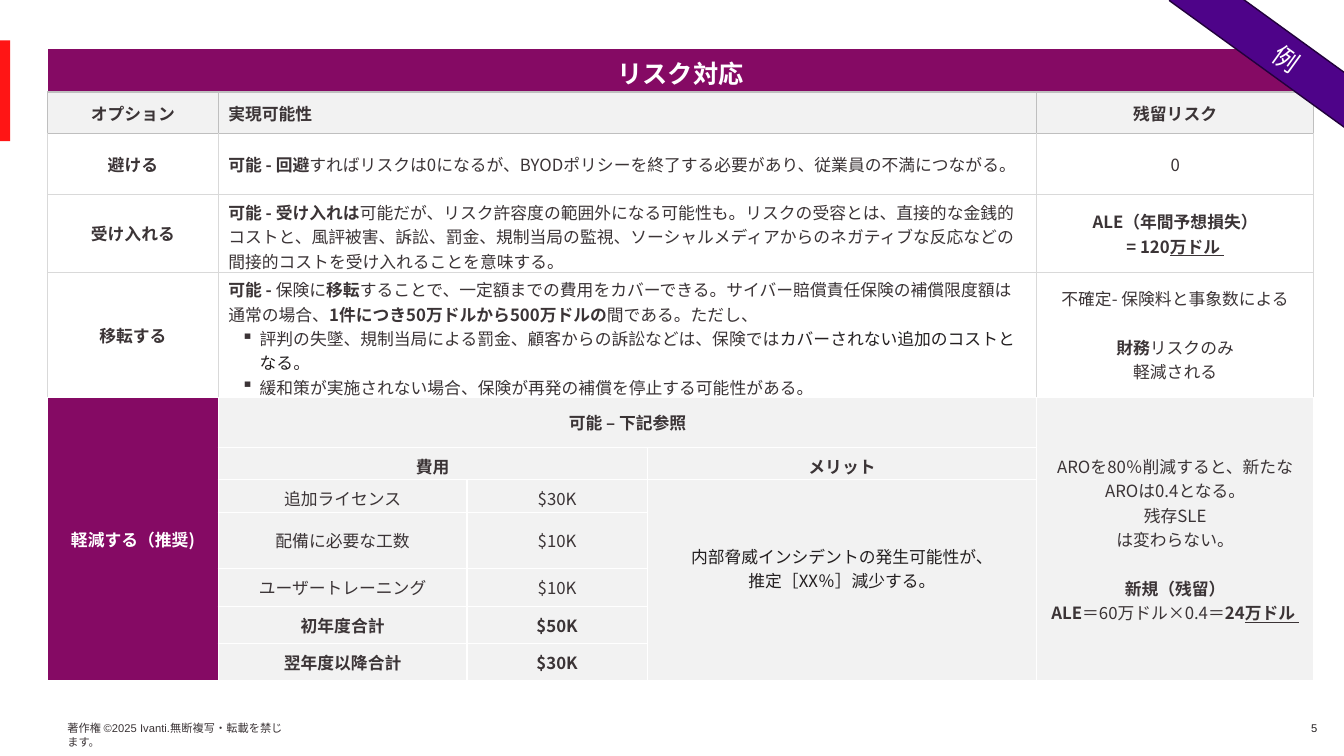
from lxml import etree
from pptx import Presentation
from pptx.dml.color import RGBColor
from pptx.enum import shapes, text
from pptx.oxml import ns
from pptx.util import Cm, Pt

SANS, INK, BLACK, WHITE = "Noto Sans CJK JP", "3B3436", "231F20", "FFFFFF"
PLUM, PALE, GREY, LIGHT = "850A64", "F2F2F2", "BFBFBF", "D9D9D9"
LEFT, MID, RIGHT = text.PP_ALIGN.LEFT, text.PP_ALIGN.CENTER, text.PP_ALIGN.RIGHT
LINE = Pt(17.4)


def rgb(code):
    return RGBColor.from_string(code)


def write(frame, words, size=12, color=INK, face=SANS, align=MID):
    """Marks: * bold, _ underline, ~ black; a line may open with ^ (gap) or ▪ (bullet)."""
    for i, line in enumerate(words.split("\n")):
        para = frame.paragraphs[0] if i == 0 else frame.add_paragraph()
        para.alignment = align
        if line[0] == "^":
            para.space_before = LINE
        if line[0] == "▪":
            props = para._p.get_or_add_pPr()
            props.set("marL", str(Cm(0.79)))
            props.set("indent", str(Cm(-0.46)))
            etree.SubElement(props, ns.qn("a:buChar"), char="▪")
        font = para.font
        font.size, font.name, font.color.rgb = Pt(size), face, rgb(color)
        base = para._p.pPr.find(ns.qn("a:defRPr"))
        etree.SubElement(base, ns.qn("a:ea"), typeface=SANS)
        line = line.lstrip("^▪")
        for mark in "*_~":
            line = line.replace(mark, f"|{mark}|")
        live = set()
        for part in filter(None, line.split("|")):
            if part in "*_~":
                live ^= {part}
                continue
            run = para.add_run()
            run.text = part
            run.font.bold = "*" in live
            if "_" in live:
                run.font.underline = True
            if "~" in live:
                run.font.color.rgb = rgb(BLACK)


deck = Presentation()
deck.slide_width, deck.slide_height = Cm(33.87), Cm(19.05)
slide = deck.slides.add_slide(deck.slide_layouts[6])

# Footer and side bar
for left, width, words, color, align in [
    (1.7, 5.8, "著作権 ©2025 Ivanti.無断複写・転載を禁じます。", INK, LEFT),
    (32.23, 1.22, "5", BLACK, RIGHT),
]:
    frame = slide.shapes.add_textbox(Cm(left), Cm(18.06), Cm(width), Cm(0.6)).text_frame
    frame.word_wrap, frame.margin_left = True, 0
    write(frame, words, 8, color, "Arial", align)

bar = slide.shapes.add_shape(shapes.MSO_SHAPE.RECTANGLE, 0, Cm(1.02), Cm(0.26), Cm(2.54))
bar.shadow.inherit = False
bar.fill.solid()
bar.fill.fore_color.rgb = rgb("FF1515")
bar.line.fill.background()

# Risk table
cols = [4.3, 6.27, 4.54, 9.82, 6.97]
rows = [1.09, 1.04, 1.55, 1.95, 3.15, 1.26, 0.82, 0.82, 1.41, 0.96, 0.94, 0.94]
grid = slide.shapes.add_table(len(rows), len(cols), Cm(1.2), Cm(1.23),
                              Cm(sum(cols)), Cm(sum(rows))).table
grid.first_row = grid.horz_banding = False
for col, width in zip(grid.columns, cols):
    col.width = Cm(width)
for row, height in zip(grid.rows, rows):
    row.height = Cm(height)

sides = [WHITE, GREY] + [LIGHT] * 3 + [WHITE] * 7
rules = [WHITE, GREY, GREY, LIGHT, LIGHT] + [WHITE] * 8
for r in range(len(rows)):
    for c in range(len(cols)):
        cell = grid.cell(r, c)
        props = cell._tc.get_or_add_tcPr()
        edges = zip("LRTB", (sides[r], sides[r], rules[r], rules[r + 1]))
        for side, color in edges:
            edge = etree.SubElement(props, ns.qn(f"a:ln{side}"), w=str(Pt(1)))
            fill = etree.SubElement(edge, ns.qn("a:solidFill"))
            etree.SubElement(fill, ns.qn("a:srgbClr"), val=color)
        plum = r == 0 or (r > 4 and c == 0)
        cell.fill.solid()
        cell.fill.fore_color.rgb = rgb(PLUM if plum else WHITE if 2 <= r <= 4 else PALE)
        cell.vertical_anchor = text.MSO_ANCHOR.MIDDLE

spans = [(0, 0, 0, 4), (5, 0, 11, 0), (5, 4, 11, 4), (6, 1, 6, 2), (7, 3, 11, 3)]
spans += [(r, 1, r, 3) for r in range(1, 6)]
for top, left, end, last in spans:
    grid.cell(top, left).merge(grid.cell(end, last))

cells = {
    (0, 0): "*リスク対応*",
    (1, 0): "*オプション*",
    (1, 1): "*実現可能性*",
    (1, 4): "*残留リスク*",
    (2, 0): "*避ける*",
    (2, 1): "*可能 - 回避*すればリスクは0になるが、BYODポリシーを終了する必要があり、従業員の不満につながる。",
    (2, 4): "0",
    (3, 0): "*受け入れる*",
    (3, 1): "*可能 - 受け入れは*可能だが、リスク許容度の範囲外になる可能性も。リスクの受容とは、"
            "直接的な金銭的コストと、風評被害、訴訟、罰金、規制当局の監視、"
            "ソーシャルメディアからのネガティブな反応などの間接的コストを受け入れることを意味する。",
    (3, 4): "*ALE（年間予想損失）*\n*= 120_万ドル _*",
    (4, 0): "*移転する*",
    (4, 1): "*可能 - *保険に*移転*することで、一定額までの費用をカバーできる。"
            "サイバー賠償責任保険の補償限度額は通常の場合、*1件につき50万ドルから500万ドルの*間である。ただし、\n"
            "▪評判の失墜、規制当局による罰金、顧客からの訴訟などは、保険では~カバーされない追加のコストとなる~。\n"
            "▪緩和策が実施されない場合、保険が再発の補償を停止する可能性がある。",
    (4, 4): "不確定- 保険料と事象数による\n^*財務*リスクのみ\n軽減される",
    (5, 0): "*軽減する（推奨)*",
    (5, 1): "*可能 – 下記参照*",
    (5, 4): "AROを80％削減すると、新たなAROは0.4となる。\n残存SLE\nは変わらない。\n"
            "^*新規（残留）*\n*ALE*＝60万ドル×0.4＝*24_万ドル _*",
    (6, 1): "*費用*",
    (6, 3): "*メリット*",
    (7, 3): "~内部脅威インシデントの発生可能性が、~\n~推定［XX％］減少する。~",
}
costs = [("追加ライセンス", "$30K"), ("配備に必要な工数", "$10K"), ("ユーザートレーニング", "$10K"),
         ("*初年度合計*", "*$50K*"), ("*翌年度以降合計*", "*$30K*")]
for r, (item, cost) in enumerate(costs, 7):
    cells[r, 1], cells[r, 2] = item, cost

for (r, c), words in cells.items():
    cell = grid.cell(r, c)
    if r in (6, 7) or (r, c) in [(0, 0), (3, 1), (4, 1)]:
        cell.margin_bottom = 0
    write(cell.text_frame, words, 18 if r == 0 else 12,
          WHITE if r == 0 or (r, c) == (5, 0) else INK,
          align=LEFT if c == 1 and r < 5 else MID)
grid.cell(7, 3).margin_bottom = LINE + Cm(0.13)

# Corner ribbon
band = slide.shapes.add_shape(shapes.MSO_SHAPE.RECTANGLE, Cm(29.18), Cm(0.91), Cm(6.5), Cm(1.12))
band.rotation = 35.9
band.shadow.inherit = False
band.fill.solid()
band.fill.fore_color.rgb = rgb("4E0389")
band.line.color.rgb, band.line.width = rgb("22013C"), Pt(1)
band.text_frame.vertical_anchor = text.MSO_ANCHOR.MIDDLE
write(band.text_frame, "例", 18, WHITE)

deck.save("out.pptx")
